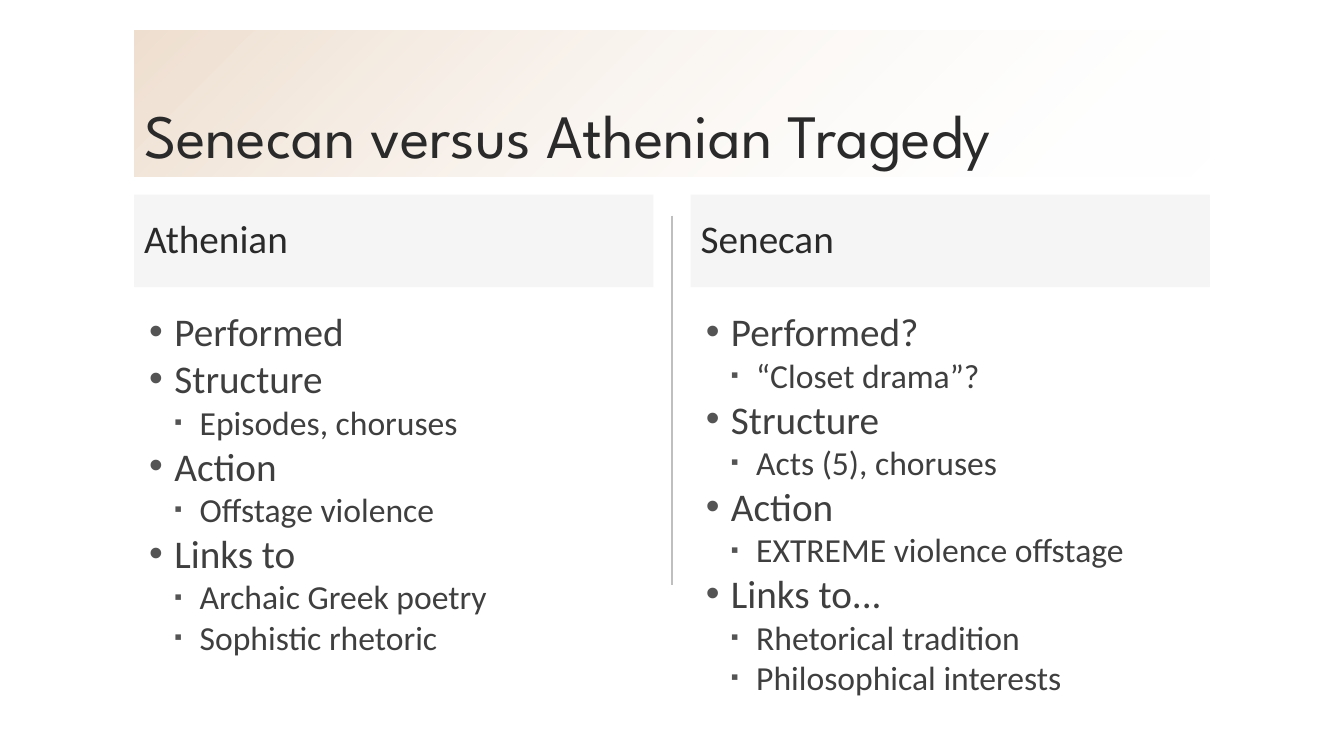
from lxml import etree
from pptx import Presentation
from pptx.dml.color import RGBColor
from pptx.enum.shapes import MSO_CONNECTOR
from pptx.enum.text import MSO_ANCHOR, MSO_AUTO_SIZE, PP_ALIGN
from pptx.oxml.ns import qn
from pptx.util import Inches, Pt

INK, BODY_TEXT, BULLET, GRAY = "2A2A2A", "3F3F3F", "545454", "BFBFBF"
LEFT, WIDTH, COLUMN_WIDTH = 1.33, 10.67, 5.15

# Each tragedy: heading, then (level, text) points
TRAGEDIES = [
    ("Athenian", [
        (0, "Performed"),
        (0, "Structure"), (1, "Episodes, choruses"),
        (0, "Action"), (1, "Offstage violence"),
        (0, "Links to"), (1, "Archaic Greek poetry"), (1, "Sophistic rhetoric"),
    ]),
    ("Senecan", [
        (0, "Performed?"), (1, "“Closet drama”?"),
        (0, "Structure"), (1, "Acts (5), choruses"),
        (0, "Action"), (1, "EXTREME violence offstage"),
        (0, "Links to..."), (1, "Rhetorical tradition"), (1, "Philosophical interests"),
    ]),
]

# Per level: text size, left margin, bullet character, bullet size in percent
LEVELS = [(28, 0.3, "•", 100), (24, 0.55, "▪", 66)]


def rgb(color):
    return RGBColor.from_string(color)


def add_child(parent, tag, **attributes):
    return etree.SubElement(parent, qn(tag), attributes)


def set_alpha(fill_element, percents):
    colors = fill_element.iter(qn("a:srgbClr"))
    for color, percent in zip(colors, percents):
        add_child(color, "a:alpha", val=str(percent * 1000))


def place(holder, left, top, width, height, anchor):
    holder.left, holder.top = Inches(left), Inches(top)
    holder.width, holder.height = Inches(width), Inches(height)
    frame = holder.text_frame
    frame.word_wrap = True
    frame.auto_size = MSO_AUTO_SIZE.NONE
    frame.vertical_anchor = anchor
    return frame


def add_text(paragraph, text, size, color, font="Calibri", spacing=0.9):
    paragraph.alignment = PP_ALIGN.LEFT
    paragraph.line_spacing = spacing
    paragraph.space_before = paragraph.space_after = Pt(0)
    run = paragraph.add_run()
    run.text = text
    run.font.name, run.font.size, run.font.bold = font, Pt(size), False
    run.font.color.rgb = rgb(color)


def add_bullet(paragraph, margin, character, percent):
    properties = paragraph._p.get_or_add_pPr()
    properties.set("marL", str(Inches(margin)))
    properties.set("indent", str(Inches(-0.25)))
    bullet_color = add_child(properties, "a:buClr")
    add_child(bullet_color, "a:srgbClr", val=BULLET)
    add_child(properties, "a:buSzPct", val=str(percent * 1000))
    add_child(properties, "a:buFont", typeface="Arial")
    add_child(properties, "a:buChar", char=character)


def fill_title(title, text):
    frame = place(title, LEFT, 0.3, WIDTH, 1.45, MSO_ANCHOR.BOTTOM)
    title.fill.gradient()
    title.fill.gradient_angle = 315
    for stop, color in zip(title.fill.gradient_stops, ("CE9F71", "FFFFFF")):
        stop.color.rgb = rgb(color)
    set_alpha(title._element.spPr, (34, 0))
    add_text(frame.paragraphs[0], text, 44, INK, "League Spartan")


def fill_heading(heading, left, text):
    frame = place(heading, left, 1.93, COLUMN_WIDTH, 0.92, MSO_ANCHOR.MIDDLE)
    heading.fill.solid()
    heading.fill.fore_color.rgb = rgb(GRAY)
    set_alpha(heading._element.spPr, (15,))
    add_text(frame.paragraphs[0], text, 28, INK)


def fill_points(body, left, points):
    frame = place(body, left, 3, COLUMN_WIDTH, 4.5, MSO_ANCHOR.TOP)
    for number, (level, text) in enumerate(points):
        paragraph = frame.add_paragraph() if number else frame.paragraphs[0]
        paragraph.level = level
        size, *bullet = LEVELS[level]
        add_text(paragraph, text, size, BODY_TEXT, spacing=1.0)
        add_bullet(paragraph, *bullet)


def add_divider(slide, x, top, bottom):
    divider = slide.shapes.add_connector(
        MSO_CONNECTOR.STRAIGHT, Inches(x), Inches(top), Inches(x), Inches(bottom))
    divider.line.color.rgb = rgb(GRAY)
    divider.line.width = Pt(1)
    add_child(divider._element.spPr, "a:effectLst")


def main():
    presentation = Presentation()
    presentation.slide_width, presentation.slide_height = Inches(13.33), Inches(7.5)
    comparison = presentation.slide_layouts.get_by_name("Comparison")
    slide = presentation.slides.add_slide(comparison)

    # Title band and the line between the columns
    fill_title(slide.shapes.title, "Senecan versus Athenian Tragedy")
    add_divider(slide, LEFT + WIDTH / 2, 2.14, 5.8)

    # Two columns, each a heading over a list
    _, *holders = slide.placeholders
    for column, (name, points) in enumerate(TRAGEDIES):
        left = LEFT + column * (WIDTH - COLUMN_WIDTH)
        heading, body = holders[2 * column:2 * column + 2]
        fill_heading(heading, left, name)
        fill_points(body, left, points)

    presentation.save("out.pptx")


if __name__ == "__main__":
    main()
